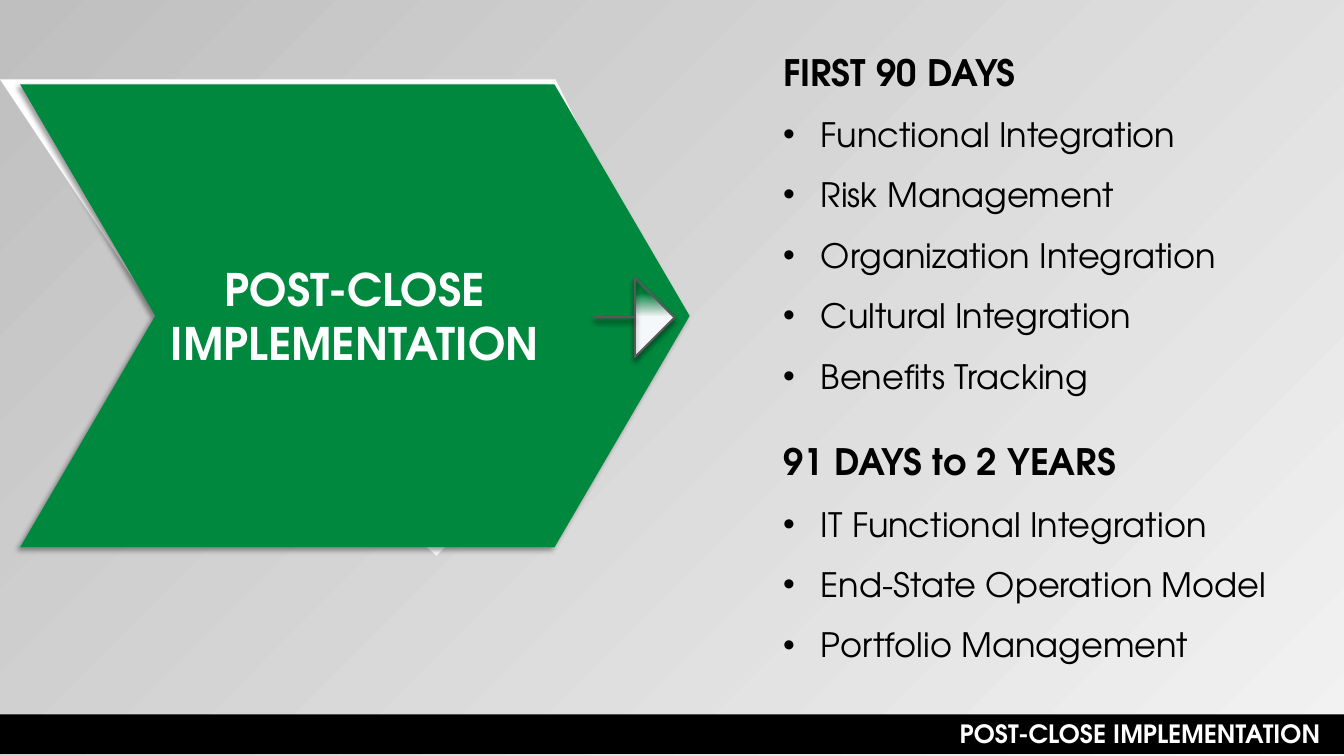
import pptx
import pptx.util
import pptx.dml.color
import pptx.enum.shapes
import pptx.enum.text
import pptx.oxml
import pptx.oxml.ns
from pptx.util import Cm

COLORS = {"green": "00883E", "white": "FFFFFF", "black": "000000", "pale": "F7FAFD",
          "outline": "595959", "light": "F2F2F2", "grey": "BFBFBF"}
FONT = "TeX Gyre Adventor"
LABEL = "POST-CLOSE IMPLEMENTATION"
SECTIONS = {
    "FIRST 90 DAYS": ["Functional Integration", "Risk Management", "Organization Integration",
                      "Cultural Integration", "Benefits Tracking"],
    "91 DAYS to 2 YEARS": ["IT Functional Integration", "End-State Operation Model",
                           "Portfolio Management"],
}


def rgb(name):
    return pptx.dml.color.RGBColor.from_string(COLORS[name])


class SlideBuilder:
    """Draws styled elements on one slide, with lengths in centimetres."""

    def __init__(self, s):
        self.s = s

    def gradient(self, fill, angle, stops):
        fill.gradient()
        fill.gradient_angle = angle
        for stop, (position, color, alpha) in zip(fill.gradient_stops, stops):
            stop.position = position
            stop.color.rgb = rgb(color)
            if alpha < 100:
                clr = stop.color._xFill.find(pptx.oxml.ns.qn("a:srgbClr"))
                clr.append(pptx.oxml.parse_xml(
                    f'<a:alpha {pptx.oxml.ns.nsdecls("a")} val="{alpha * 1000}"/>'))

    def shadow(self, sp, direction):
        effects = sp._element.spPr.find(pptx.oxml.ns.qn("a:effectLst"))
        effects.append(pptx.oxml.parse_xml(
            f'<a:outerShdw {pptx.oxml.ns.nsdecls("a")} blurRad="50800" dist="38100" '
            f'dir="{direction * 60000}" algn="ctr" rotWithShape="0"><a:srgbClr val="{COLORS["black"]}">'
            '<a:alpha val="40000"/></a:srgbClr></a:outerShdw>'))

    def plain(self, sp, color):
        sp.shadow.inherit = False
        sp.fill.solid()
        sp.fill.fore_color.rgb = rgb(color)
        sp.line.fill.background()
        return sp

    def outline(self, points, color):
        builder = self.s.shapes.build_freeform(*points[0], scale=Cm(1))
        builder.add_line_segments(points[1:], close=True)
        return self.plain(builder.convert_to_shape(), color)

    def arrow(self, points, end_position, end_alpha):
        sp = self.outline(points, "white")
        self.gradient(sp.fill, 90, [(0.51, "pale", 100), (end_position, "white", end_alpha)])
        sp.line.color.rgb = rgb("outline")
        sp.line.width = pptx.util.Pt(1.47)
        self.shadow(sp, 90)

    def format(self, p, size, color, bold=True):
        for r in p.runs:
            r.font.name = FONT
            r.font.size = pptx.util.Pt(size)
            r.font.bold = bold
            r.font.color.rgb = rgb(color)

    def chevron(self, text, left, top, width, height):
        sp = self.s.shapes.add_shape(pptx.enum.shapes.MSO_SHAPE.CHEVRON,
                                     Cm(left), Cm(top), Cm(width), Cm(height))
        sp.adjustments[0] = 0.292
        self.plain(sp, "green")
        self.shadow(sp, 135)
        tf = sp.text_frame
        tf.text = text
        tf.vertical_anchor = pptx.enum.text.MSO_ANCHOR.MIDDLE
        tf.paragraphs[0].alignment = pptx.enum.text.PP_ALIGN.CENTER
        self.format(tf.paragraphs[0], 32, "white")

    def placeholder(self, sp, left, top, width, height):
        sp.left, sp.top, sp.width, sp.height = Cm(left), Cm(top), Cm(width), Cm(height)
        self.s.shapes._spTree.append(sp._element)
        tf = sp.text_frame
        tf.word_wrap = True
        tf.auto_size = pptx.enum.text.MSO_AUTO_SIZE.SHAPE_TO_FIT_TEXT
        tf.vertical_anchor = pptx.enum.text.MSO_ANCHOR.TOP
        return tf

    def title(self, text, *box):
        tf = self.placeholder(self.s.shapes.title, *box)
        tf.text = text
        tf.paragraphs[0].alignment = pptx.enum.text.PP_ALIGN.RIGHT
        self.format(tf.paragraphs[0], 18, "white")

    def sections(self, sections, *box):
        tf = self.placeholder(self.s.placeholders[1], *box)
        tf.text = "\n".join(line for head, items in sections.items() for line in [head, *items])
        for p in tf.paragraphs:
            heading = p.text in sections
            p.line_spacing = 2.0 if heading else 1.5
            p.space_before = pptx.util.Pt(0)
            self.format(p, 26 if heading else 24, "black", heading)
            if heading:
                pPr = p._p.get_or_add_pPr()
                pPr.set("marL", "0")
                pPr.set("indent", "0")
                pPr.append(pptx.oxml.parse_xml(f'<a:buNone {pptx.oxml.ns.nsdecls("a")}/>'))


def main():
    prs = pptx.Presentation()
    prs.slide_width, prs.slide_height = Cm(33.87), Cm(19.05)
    s = prs.slides.add_slide(prs.slide_layouts[1])
    b = SlideBuilder(s)
    b.gradient(s.background.fill, 135, [(0, "light", 100), (1, "grey", 100)])

    b.outline([(0.41, 1.98), (13.79, 1.98), (17.2, 7.85), (10.97, 13.64), (3.84, 7.8)], "white")
    b.chevron(LABEL, 0.51, 2.13, 16.87, 11.66)
    b.outline([(0, 17.6), (30.71, 17.6), (31.37, 18.03), (31.98, 17.6),
               (33.87, 17.6), (33.87, 19.05), (0, 19.05)], "black")
    b.title(LABEL, 10.52, 17.98, 23.01, 1.02)

    mid = 7.95
    b.arrow([(14.73, mid), (16.21, mid - 0.42), (16.21, mid - 1.08), (16.89, mid),
             (16.21, mid + 1.08), (16.21, mid + 0.42)], 0.8, 0)
    for left, tip, half in [(15.75, 16.1, 0.56), (15.34, 15.57, 0.44)]:
        b.arrow([(left, mid - half), (tip, mid), (left, mid + half)], 1, 20)

    b.sections(SECTIONS, 19.48, 0.03, 13.61, 16.99)
    prs.save("out.pptx")


if __name__ == "__main__":
    main()
